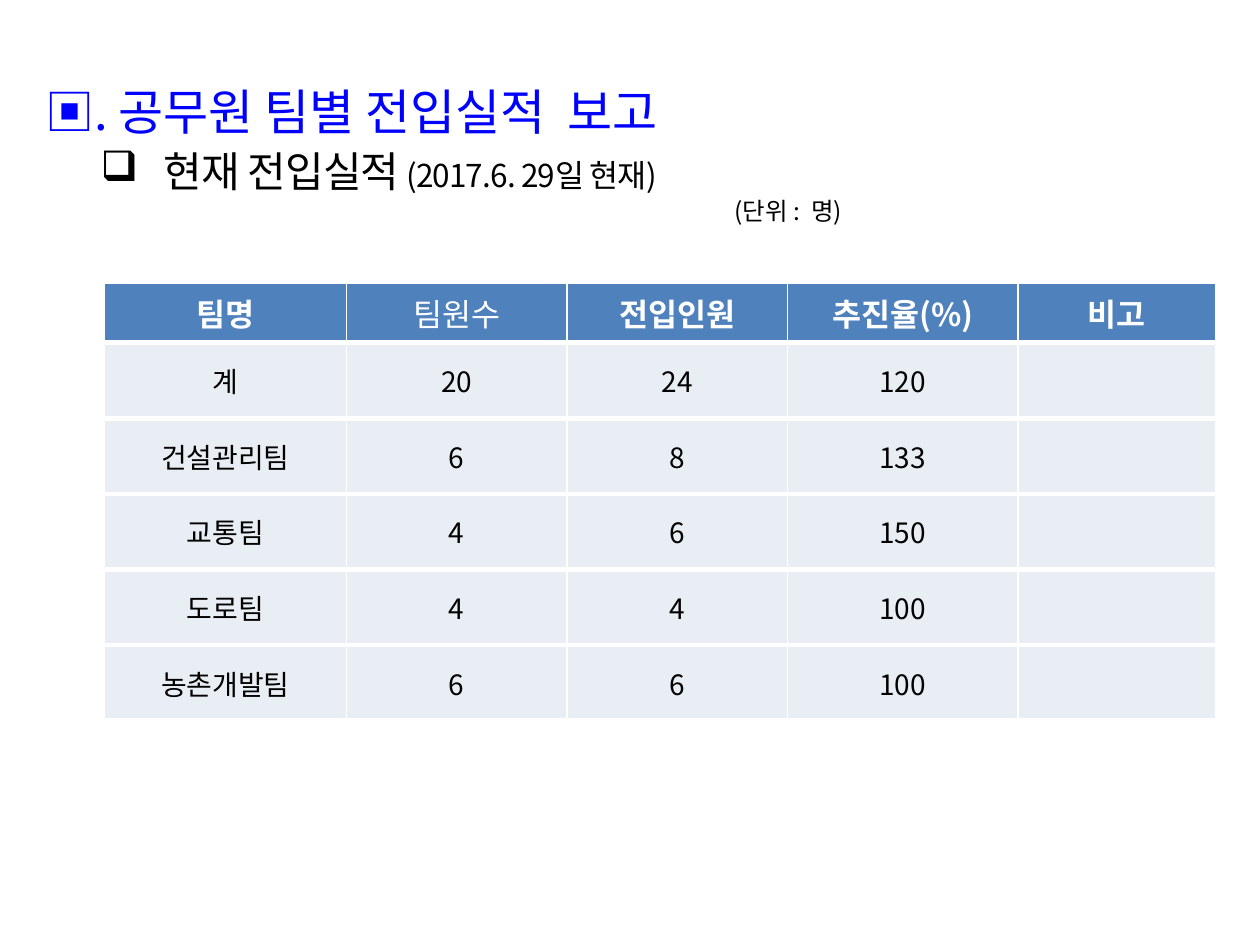
import pptx
import pptx.util
import pptx.dml.color
import pptx.enum.text
import pptx.oxml
import pptx.oxml.ns
import lxml.etree

Inches, Pt = pptx.util.Inches, pptx.util.Pt
FACE = "Noto Sans CJK KR"
TITLE = "▣. 공무원 팀별 전입실적  보고"
STATUS = [("현재 전입실적", 24), (" (2017.6. 29일 현재)", 18)]
UNIT = "(단위 :  명)"
HEAD = ["팀명", "팀원수", "전입인원", "추진율(%)", "비고"]
TEAMS = [
    ("계", 20, 24, 120, ""),
    ("건설관리팀", 6, 8, 133, ""),
    ("교통팀", 4, 6, 150, ""),
    ("도로팀", 4, 4, 100, ""),
    ("농촌개발팀", 6, 6, 100, ""),
]
WIDTHS = [1.92, 1.75, 1.75, 1.83, 1.57]
HEIGHTS = [0.47] + [0.6] * len(TEAMS)


def color(code):
    return pptx.dml.color.RGBColor.from_string(code)


def add(parent, tag, **attrs):
    node = lxml.etree.SubElement(parent, pptx.oxml.ns.qn(tag))
    for key, value in attrs.items():
        node.set(key, str(value))
    return node


def style(font, size, code, bold=False):
    font.name, font.size, font.bold = FACE, Pt(size), bold
    font.color.rgb = color(code)
    add(font._element, "a:ea", typeface=FACE)


def write(para, parts, code, left, first=0, before=0):
    props = para._p.get_or_add_pPr()
    props.set("marL", str(Inches(left)))
    props.set("indent", str(Inches(first)))
    para.line_spacing = 1.0
    para.space_before = Pt(before)
    for text, size in parts:
        run = para.add_run()
        run.text = text
        style(run.font, size, code)
    return props


def border(cell, top):
    props = cell._tc.get_or_add_tcPr()
    fill = props[0]
    for side, width in zip("LRTB", (1, 1, top, 3)):
        line = pptx.oxml.parse_xml(
            f'<a:ln{side} {pptx.oxml.ns.nsdecls("a")} w="{Pt(width)}">'
            f'<a:solidFill><a:srgbClr val="FFFFFF"/></a:solidFill></a:ln{side}>')
        fill.addprevious(line)


deck = pptx.Presentation()
deck.slide_width, deck.slide_height = Inches(10), Inches(7.5)
slide = deck.slides.add_slide(deck.slide_layouts[6])

frame = slide.shapes.add_textbox(
    Inches(0.2), Inches(0.6), Inches(9.8), Inches(6.38)).text_frame
frame.word_wrap = True
write(frame.paragraphs[0], [(TITLE, 28)], "0000FF", 0.56, -0.5, 5.6)
props = write(frame.add_paragraph(), STATUS, "000000", 1, -0.5, 3)
add(props, "a:buChar", char="❑")
for run in frame.paragraphs[1].runs:
    run.font._element.set("spc", "-50")
write(frame.add_paragraph(), [(UNIT, 14)], "000000", 5.53)

rows = [HEAD] + TEAMS
table = slide.shapes.add_table(
    len(rows), len(HEAD), Inches(0.83), Inches(2.25),
    Inches(sum(WIDTHS)), Inches(sum(HEIGHTS))).table
for col, width in zip(table.columns, WIDTHS):
    col.width = Inches(width)
for r, values in enumerate(rows):
    table.rows[r].height = Inches(HEIGHTS[r])
    for c, value in enumerate(values):
        cell = table.cell(r, c)
        cell.fill.solid()
        cell.fill.fore_color.rgb = color("E9EDF4" if r else "4F81BD")
        border(cell, 3 if r else 1)
        cell.vertical_anchor = pptx.enum.text.MSO_ANCHOR.MIDDLE
        para = cell.text_frame.paragraphs[0]
        para.text = str(value)
        para.alignment = pptx.enum.text.PP_ALIGN.CENTER
        if r:
            style(para.font, 16, "000000")
        else:
            style(para.font, 18, "FFFFFF", value != "팀원수")

deck.save("out.pptx")
